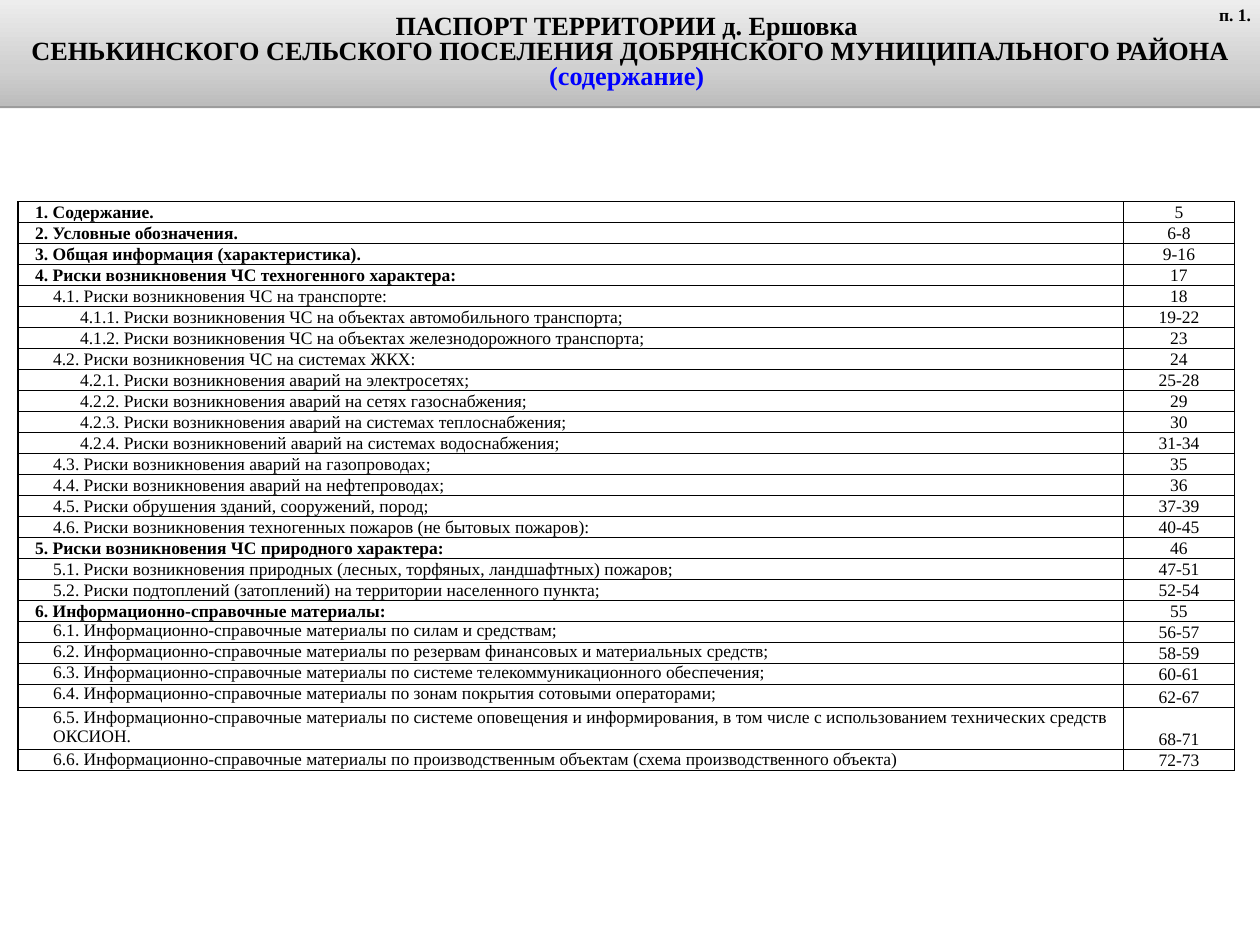
from copy import deepcopy

from lxml.etree import SubElement
from pptx import Presentation
from pptx.dml.color import RGBColor
from pptx.enum.text import MSO_ANCHOR, MSO_AUTO_SIZE, PP_ALIGN
from pptx.oxml.ns import qn
from pptx.util import Inches, Pt

HEADING = [
    ("ПАСПОРТ ТЕРРИТОРИИ д. Ершовка ", "000000"),
    ("СЕНЬКИНСКОГО СЕЛЬСКОГО ПОСЕЛЕНИЯ ДОБРЯНСКОГО МУНИЦИПАЛЬНОГО РАЙОНА", "000000"),
    ("(содержание) ", "0000FF"),
]
CONTENTS = [
    ("1. Содержание.", "5"),
    ("2. Условные обозначения.", "6-8"),
    ("3. Общая информация (характеристика).", "9-16"),
    ("4. Риски возникновения ЧС техногенного характера:", "17"),
    ("4.1. Риски возникновения ЧС на транспорте:", "18"),
    ("4.1.1. Риски возникновения ЧС на объектах автомобильного транспорта;", "19-22"),
    ("4.1.2. Риски возникновения ЧС на объектах железнодорожного транспорта;", "23"),
    ("4.2. Риски возникновения ЧС на системах ЖКХ:", "24"),
    ("4.2.1. Риски возникновения аварий на электросетях;", "25-28"),
    ("4.2.2. Риски возникновения аварий на сетях газоснабжения;", "29"),
    ("4.2.3. Риски возникновения аварий на системах теплоснабжения;", "30"),
    ("4.2.4. Риски возникновений аварий на системах водоснабжения;", "31-34"),
    ("4.3. Риски возникновения аварий на газопроводах;", "35"),
    ("4.4. Риски возникновения аварий на нефтепроводах;", "36"),
    ("4.5. Риски обрушения зданий, сооружений, пород;", "37-39"),
    ("4.6. Риски возникновения техногенных пожаров (не бытовых пожаров):", "40-45"),
    ("5. Риски возникновения ЧС природного характера:", "46"),
    ("5.1. Риски возникновения природных (лесных, торфяных, ландшафтных) пожаров;", "47-51"),
    ("5.2. Риски подтоплений (затоплений) на территории населенного пункта;", "52-54"),
    ("6. Информационно-справочные материалы:", "55"),
    ("6.1. Информационно-справочные материалы по силам и средствам;", "56-57"),
    ("6.2. Информационно-справочные материалы по резервам финансовых и материальных средств;", "58-59"),
    ("6.3. Информационно-справочные материалы по системе телекоммуникационного обеспечения;", "60-61"),
    ("6.4. Информационно-справочные материалы по зонам покрытия сотовыми операторами;", "62-67"),
    ("6.5. Информационно-справочные материалы по системе оповещения и информирования, "
     "в том числе с использованием технических средств ОКСИОН.", "68-71"),
    ("6.6. Информационно-справочные материалы по производственным объектам "
     "(схема производственного объекта)", "72-73"),
]
INDENTS = {1: 0.19, 2: 0.39, 3: 0.69}
TALL_ROWS = {23: 0.26, 24: 0.47}
TABLE_HEIGHT = 6.33


def color(value):
    return RGBColor.from_string(value)


class PassportSlide:
    """Holds the type style and the slide, and adds each kind of element."""

    font_name = "Times New Roman"
    body_size = 14
    heading_size = 21

    def __init__(self, deck):
        self.slide = deck.slides.add_slide(deck.slide_layouts[5])

    def add_text(self, paragraph, text, size, bold=False, ink="000000", align=PP_ALIGN.LEFT):
        paragraph.alignment = align
        run = paragraph.add_run()
        run.text = text
        run.font.name = self.font_name
        run.font.size = Pt(size)
        run.font.bold = bold
        run.font.color.rgb = color(ink)

    def heading(self, lines, left, top, width, height):
        banner = self.slide.shapes.title
        banner.left, banner.top = Inches(left), Inches(top)
        banner.width, banner.height = Inches(width), Inches(height)
        self.shade(banner, [(0, "BCBCBC"), (0.35, "D0D0D0"), (1, "EDEDED")])
        self.drop_shadow(banner)
        frame = banner.text_frame
        frame.word_wrap = True
        frame.auto_size = MSO_AUTO_SIZE.NONE
        frame.vertical_anchor = MSO_ANCHOR.MIDDLE
        for index, (text, ink) in enumerate(lines):
            paragraph = frame.add_paragraph() if index else frame.paragraphs[0]
            paragraph.line_spacing = 0.8
            self.add_text(paragraph, text, self.heading_size, True, ink, PP_ALIGN.CENTER)

    def shade(self, banner, stops):
        banner.fill.gradient()
        banner.fill.gradient_angle = 90
        stop_list = banner.element.spPr.find(qn("a:gradFill")).find(qn("a:gsLst"))
        stop_list.append(deepcopy(stop_list[0]))
        for stop, (position, shade) in zip(banner.fill.gradient_stops, stops):
            stop.position = position
            stop.color.rgb = color(shade)
        banner.line.fill.background()

    def drop_shadow(self, banner):
        effects = SubElement(banner.element.spPr, qn("a:effectLst"))
        shadow = SubElement(effects, qn("a:outerShdw"), dist=str(Pt(1.6)),
                            dir="5400000", rotWithShape="0")
        shade = SubElement(shadow, qn("a:srgbClr"), val="000000")
        SubElement(shade, qn("a:alpha"), val="38000")

    def page_mark(self, text, left, top, width, height):
        mark = self.slide.shapes.add_textbox(
            Inches(left), Inches(top), Inches(width), Inches(height))
        frame = mark.text_frame
        frame.word_wrap = True
        frame.auto_size = MSO_AUTO_SIZE.SHAPE_TO_FIT_TEXT
        self.add_text(frame.paragraphs[0], text, self.body_size, True, align=PP_ALIGN.RIGHT)

    def contents(self, entries, left, top, widths):
        table = self.slide.shapes.add_table(
            len(entries), len(widths), Inches(left), Inches(top),
            Inches(sum(widths)), Inches(TABLE_HEIGHT)).table
        table.first_row = table.horz_banding = False
        for column, width in zip(table.columns, widths):
            column.width = Inches(width)
        regular = (TABLE_HEIGHT - sum(TALL_ROWS.values())) / (len(entries) - len(TALL_ROWS))
        for index, (topic, pages) in enumerate(entries):
            table.rows[index].height = Inches(TALL_ROWS.get(index, regular))
            level = topic.split()[0].count(".")
            reference = topic.startswith("6.") and level > 1
            topic_cell, pages_cell = table.rows[index].cells
            self.cell(topic_cell, MSO_ANCHOR.TOP if reference else MSO_ANCHOR.BOTTOM)
            self.cell(pages_cell, MSO_ANCHOR.BOTTOM)
            entry = topic_cell.text_frame.paragraphs[0]
            self.add_text(entry, topic, self.body_size, level == 1)
            properties = entry._p.get_or_add_pPr()
            properties.set("marL", str(Inches(INDENTS[level])))
            properties.set("indent", "0")
            self.add_text(pages_cell.text_frame.paragraphs[0], pages, self.body_size,
                          align=PP_ALIGN.CENTER)

    def cell(self, cell, anchor):
        cell.margin_left = cell.margin_right = cell.margin_top = cell.margin_bottom = 0
        cell.vertical_anchor = anchor
        properties = cell._tc.get_or_add_tcPr()
        for side in ("lnL", "lnR", "lnT", "lnB"):
            border = SubElement(properties, qn(f"a:{side}"), w=str(Pt(1)))
            SubElement(SubElement(border, qn("a:solidFill")), qn("a:srgbClr"), val="000000")
        cell.fill.solid()
        cell.fill.fore_color.rgb = color("FFFFFF")


def main():
    deck = Presentation()
    deck.slide_width, deck.slide_height = Inches(14), Inches(10.5)
    passport = PassportSlide(deck)
    passport.contents(CONTENTS, 0.2, 2.24, (12.28, 1.24))
    passport.heading(HEADING, 0, 0, 14, 1.18)
    passport.page_mark("п. 1.", 13.21, 0, 0.79, 0.33)
    deck.save("out.pptx")


if __name__ == "__main__":
    main()
